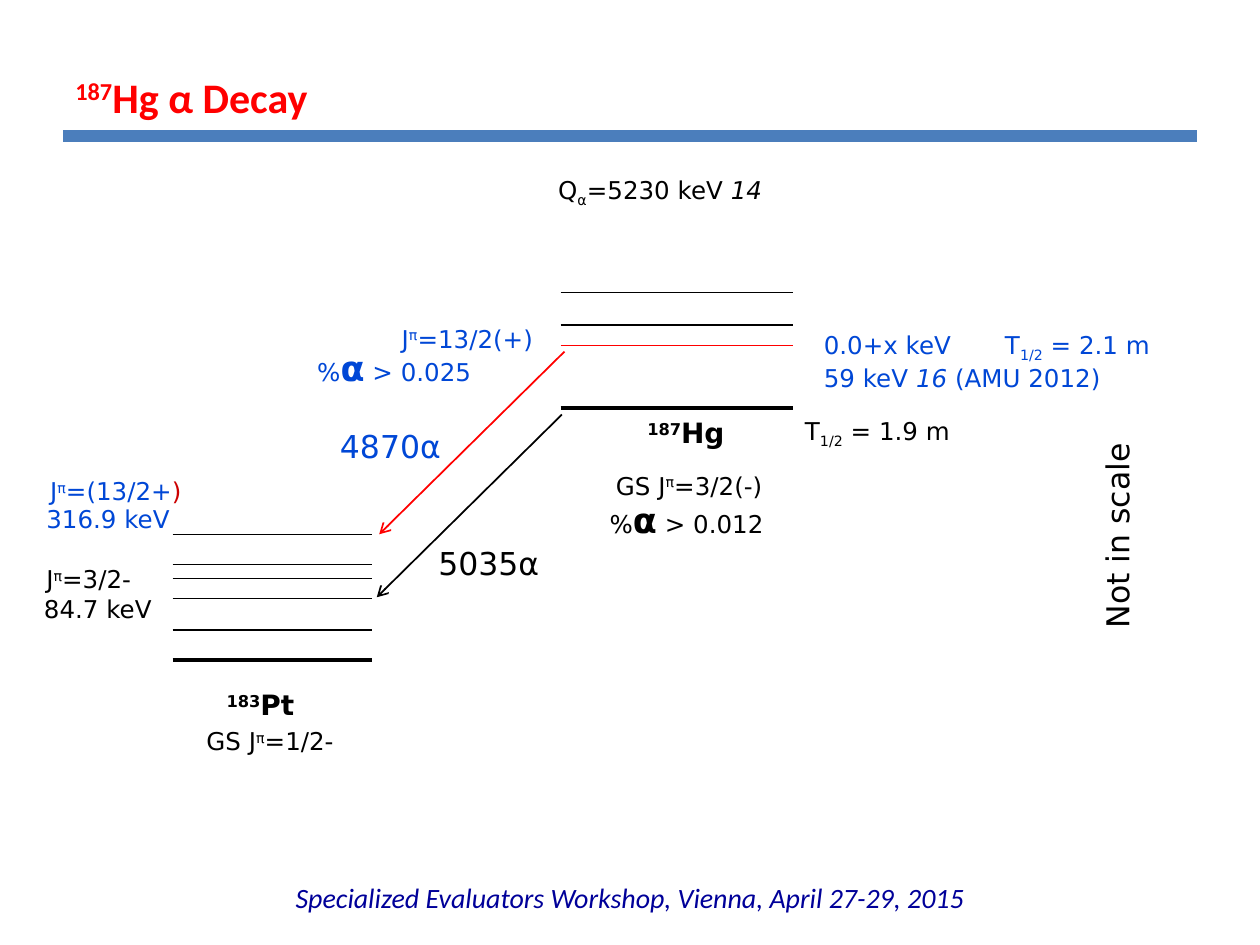
from lxml import etree
from pptx import Presentation
from pptx.dml.color import RGBColor
from pptx.enum.shapes import MSO_CONNECTOR
from pptx.enum.text import MSO_ANCHOR, MSO_AUTO_SIZE, PP_ALIGN
from pptx.oxml.ns import qn
from pptx.util import Pt

STRAIGHT = MSO_CONNECTOR.STRAIGHT
MIDDLE = MSO_ANCHOR.MIDDLE
TOP = MSO_ANCHOR.TOP
FIT_SHAPE = MSO_AUTO_SIZE.SHAPE_TO_FIT_TEXT
FIXED = MSO_AUTO_SIZE.NONE
CENTER = PP_ALIGN.CENTER
LEFT = PP_ALIGN.LEFT

BLACK = RGBColor(0x00, 0x00, 0x00)
RED = RGBColor(0xFF, 0x00, 0x00)
DARK_RED = RGBColor(0xCC, 0x00, 0x00)
BLUE = RGBColor(0x00, 0x47, 0xD6)
NAVY = RGBColor(0x00, 0x00, 0x99)
RULE_BLUE = RGBColor(0x4B, 0x7E, 0xBC)

SUPER = {"baseline": 30000}
SUB = {"baseline": -25000}
ITALIC = {"italic": True}
BIG_ALPHA = ("α", {"size": Pt(20), "bold": True})
WIDE_SPACE = (" ", {"size": Pt(18)})
HALF_LIFE = ("1/2", SUB)
PI = ("π", SUPER)


class DecayScheme:
    label_format = {"name": "DejaVu Sans", "size": Pt(14), "bold": False, "italic": False}
    heading_format = {"name": "Calibri", "size": Pt(24), "bold": True}
    footer_format = {"name": "Calibri", "size": Pt(16), "italic": True}
    nuclide_format = {"size": Pt(16), "bold": True}
    large_format = {"size": Pt(18)}

    def __init__(self, slide):
        self.slide = slide

    def line(self, start, end, color=BLACK, width=0.75, arrow=False):
        connector = self.slide.shapes.add_connector(
            STRAIGHT, *(Pt(value) for value in start + end))
        connector.line.color.rgb = color
        connector.line.width = Pt(width)
        if arrow:
            outline = connector.line._get_or_add_ln()
            etree.SubElement(outline, qn("a:tailEnd"), type="arrow")
        etree.SubElement(connector._element.spPr, qn("a:effectLst"))

    def levels(self, left, right, levels):
        for height, color, width in levels:
            self.line((left, height), (right, height), color, width)

    def text_box(self, box, paragraphs, color, text_format, wrap, anchor, fit,
                 align=LEFT, rotation=0, tab=None):
        shape = self.slide.shapes.add_textbox(*(Pt(value) for value in box))
        shape.rotation = rotation
        frame = shape.text_frame
        frame.word_wrap = wrap
        frame.auto_size = fit
        frame.vertical_anchor = anchor
        for index, runs in enumerate(paragraphs):
            paragraph = frame.paragraphs[0] if index == 0 else frame.add_paragraph()
            paragraph.alignment = align
            if tab:
                tabs = etree.SubElement(paragraph._p.get_or_add_pPr(), qn("a:tabLst"))
                etree.SubElement(tabs, qn("a:tab"), pos=str(Pt(tab)), algn="l")
            for run in runs:
                self.run(paragraph, run, color, text_format)

    def run(self, paragraph, content, color, text_format):
        text, changes = (content, {}) if isinstance(content, str) else content
        values = {**text_format, **changes}
        baseline = values.pop("baseline", None)
        run = paragraph.add_run()
        run.text = text
        run.font.color.rgb = values.pop("color", color)
        for name, value in values.items():
            setattr(run.font, name, value)
        if baseline:
            run.font._element.set("baseline", str(baseline))

    def label(self, box, *paragraphs, color=BLACK, changes=None, wrap=False, **options):
        text_format = {**self.label_format, **(changes or {})}
        self.text_box(box, paragraphs, color, text_format, wrap, TOP, FIT_SHAPE, **options)

    def heading(self, box, *runs):
        self.text_box(box, [runs], RED, self.heading_format, True, MIDDLE, FIXED)

    def footer(self, box, text):
        self.text_box(box, [[text]], NAVY, self.footer_format, True, MIDDLE, FIXED, CENTER)

    def nuclide(self, box, mass, symbol):
        self.label(box, [(mass, SUPER), symbol], changes=self.nuclide_format)

    def large(self, box, text, **options):
        self.label(box, [text], changes=self.large_format, **options)


def main():
    presentation = Presentation()
    presentation.slide_width = Pt(720)
    presentation.slide_height = Pt(540)
    scheme = DecayScheme(presentation.slides.add_slide(presentation.slide_layouts[6]))

    scheme.line((36, 77.8), (684, 77.8), RULE_BLUE, 7)
    scheme.heading((36, 23.8, 648, 62.6), ("187", SUPER), "Hg α Decay")
    scheme.footer((36, 498.2, 648, 28.8),
                  "Specialized Evaluators Workshop, Vienna, April 27-29, 2015")

    scheme.levels(320.4, 452.9, [
        (167, BLACK, 0.75), (185.8, BLACK, 0.75), (197.3, RED, 0.75), (233.3, BLACK, 2)])
    scheme.levels(98.6, 212.4, [
        *((height, BLACK, 0.75) for height in (305.3, 322.6, 330.5, 342, 360)),
        (377.3, BLACK, 2)])
    scheme.line((321.1, 236.9), (215.3, 341.3), BLACK, 1, arrow=True)
    scheme.line((322.6, 200.9), (216.7, 305.3), RED, 1, arrow=True)

    scheme.label((311.8, 96.5, 149.8, 24.5),
                 ["Q", ("α", SUB), "=5230 keV ", ("14", ITALIC)], wrap=True)
    scheme.label((222.5, 181.4, 95.8, 24.5), ["J", PI, "=13/2(+)"], color=BLUE)
    scheme.label((174.2, 194.4, 105.1, 31.7), ["%", BIG_ALPHA, " > 0.025"], color=BLUE)
    scheme.label((463.7, 185, 219.6, 41),
                 ["0.0+x keV\tT", HALF_LIFE, " = 2.1 m"],
                 ["59 keV ", ("16", ITALIC), " (AMU 2012)"], color=BLUE, tab=103.5)

    scheme.nuclide((362.9, 234, 62.6, 26.6), "187", "Hg")
    scheme.label((452.9, 234, 103, 24.5), ["T", HALF_LIFE, " = 1.9 m"])
    scheme.label((344.9, 261.4, 113.8, 28.8), ["GS J", PI, "=3/2(-)", WIDE_SPACE])
    scheme.label((341.3, 281.5, 105.1, 31.7), ["%", BIG_ALPHA, " > 0.012"])

    scheme.label((21.6, 268.6, 95.8, 24.5),
                 ["J", PI, "=(13/2+", (")", {"color": DARK_RED})], color=BLUE)
    scheme.label((19.4, 284.4, 87.1, 24.5), ["316.9 keV"], color=BLUE)
    scheme.label((19.4, 319, 68.4, 24.5), ["J", PI, "=3/2-"])
    scheme.label((18, 336.2, 77.8, 24.5), ["84.7 keV"])
    scheme.nuclide((122.4, 389.5, 56.9, 26.6), "183", "Pt")
    scheme.label((110.9, 407.5, 100.8, 28.8), ["GS J", PI, "=1/2-", WIDE_SPACE])

    scheme.large((243.4, 307.4, 79.2, 28.8), "5035α")
    scheme.large((187.2, 240.5, 79.2, 28.8), "4870α", color=BLUE)
    scheme.large((578.2, 291.6, 120.2, 28.8), "Not in scale", rotation=270)

    presentation.save("out.pptx")


if __name__ == "__main__":
    main()
